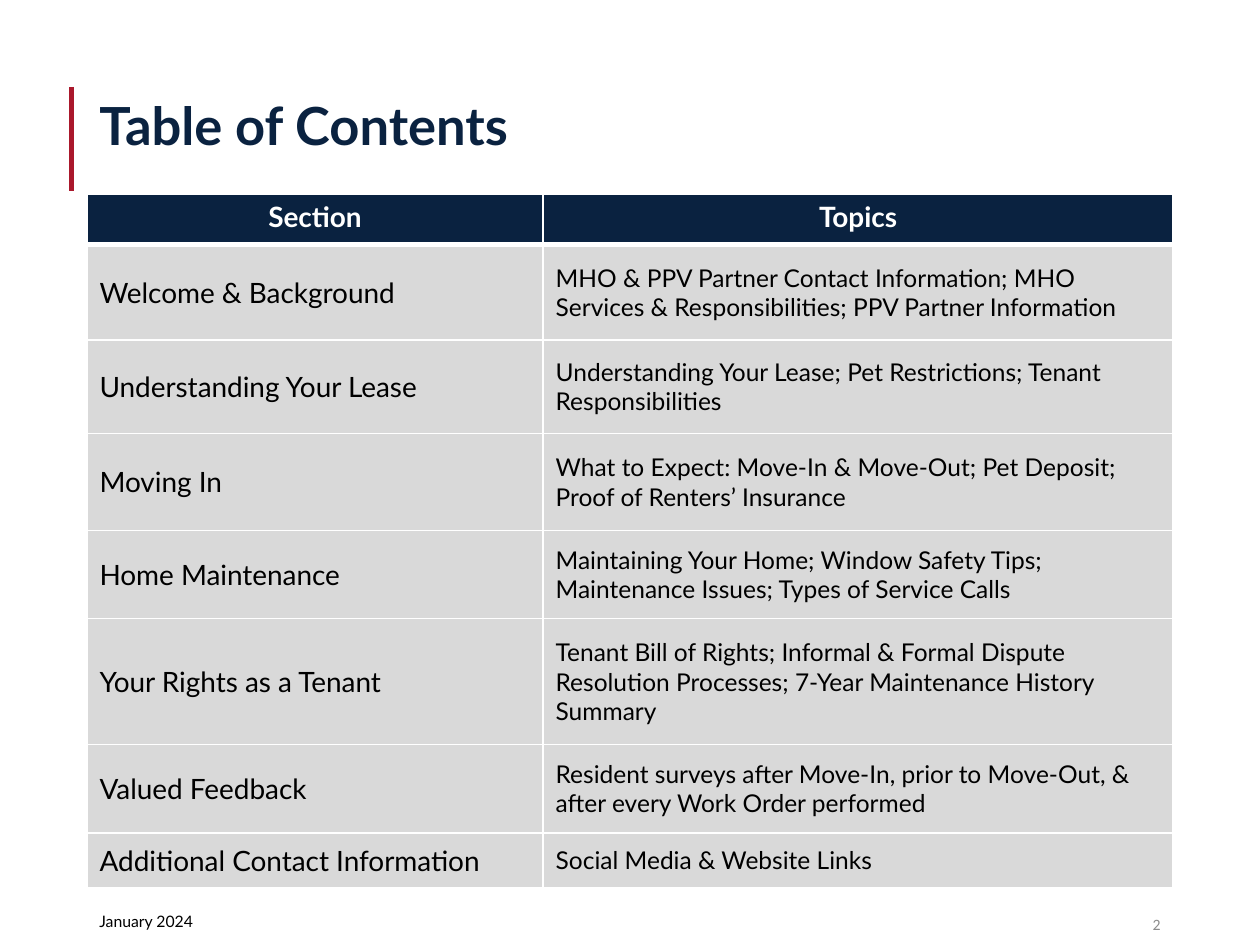
from lxml import etree
from pptx import Presentation
from pptx.dml.color import RGBColor
from pptx.enum.shapes import MSO_CONNECTOR
from pptx.enum.text import MSO_ANCHOR, PP_ALIGN
from pptx.oxml.ns import qn
from pptx.util import Inches, Pt

STRAIGHT = MSO_CONNECTOR.STRAIGHT
TOP, MIDDLE = MSO_ANCHOR.TOP, MSO_ANCHOR.MIDDLE
LEFT, CENTER, RIGHT = PP_ALIGN.LEFT, PP_ALIGN.CENTER, PP_ALIGN.RIGHT
NAVY, RED, GRAY, WHITE, BLACK = "0A2240", "AA182C", "D9D9D9", "FFFFFF", "000000"


def color(value):
    return RGBColor.from_string(value)


def write(frame, text, size, fill=BLACK, bold=False, align=LEFT, font="Lato", spacing=None):
    paragraph = frame.paragraphs[0]
    paragraph.alignment = align
    paragraph.line_spacing = spacing
    run = paragraph.add_run()
    run.text = text
    run.font.name = font
    run.font.size = Pt(size)
    run.font.bold = bold
    run.font.color.rgb = color(fill)


presentation = Presentation()
presentation.slide_width = Inches(10)
presentation.slide_height = Inches(7.5)
slide = presentation.slides.add_slide(presentation.slide_layouts[6])

accent = slide.shapes.add_connector(STRAIGHT, Inches(0.57), Inches(0.69), Inches(0.57), Inches(1.52))
accent.line.color.rgb = color(RED)
accent.line.width = Pt(3)
etree.SubElement(accent.element.spPr, qn("a:effectLst"))

text_boxes = [
    (0.69, 0.75, 8.62, 0.64, TOP, "Table of Contents", dict(size=30, fill=NAVY, bold=True, spacing=0.9)),
    (0.69, 7.21, 2.25, 0.21, MIDDLE, "January 2024", dict(size=9)),
    (7.06, 7.21, 2.25, 0.4, TOP, "2", dict(size=9, fill="8C8C8C", align=RIGHT, font="Calibri")),
]
for left, top, width, height, anchor, text, style in text_boxes:
    shape = slide.shapes.add_textbox(Inches(left), Inches(top), Inches(width), Inches(height))
    shape.text_frame.word_wrap = True
    shape.text_frame.vertical_anchor = anchor
    write(shape.text_frame, text, **style)

contents = [
    (0.4, "Section", "Topics"),
    (0.76, "Welcome & Background",
     "MHO & PPV Partner Contact Information; MHO Services & Responsibilities; PPV Partner Information"),
    (0.74, "Understanding Your Lease", "Understanding Your Lease; Pet Restrictions; Tenant Responsibilities"),
    (0.77, "Moving In", "What to Expect: Move-In & Move-Out; Pet Deposit; Proof of Renters’ Insurance"),
    (0.7, "Home Maintenance",
     "Maintaining Your Home; Window Safety Tips; Maintenance Issues; Types of Service Calls"),
    (1, "Your Rights as a Tenant",
     "Tenant Bill of Rights; Informal & Formal Dispute Resolution Processes; 7-Year Maintenance History Summary"),
    (0.7, "Valued Feedback", "Resident surveys after Move-In, prior to Move-Out, & after every Work Order performed"),
    (0.44, "Additional Contact Information", "Social Media & Website Links"),
]
table = slide.shapes.add_table(
    len(contents), 2, Inches(0.69), Inches(1.54), Inches(8.62), Inches(5.51)
).table
table.columns[0].width = Inches(3.62)
table.columns[1].width = Inches(5)

for row, (height, *texts) in enumerate(contents):
    table.rows[row].height = Inches(height)
    header = row == 0
    for column, text in enumerate(texts):
        cell = table.cell(row, column)
        cell.vertical_anchor = TOP if header else MIDDLE
        if header:
            write(cell.text_frame, text, size=16, fill=WHITE, bold=True, align=CENTER)
        else:
            write(cell.text_frame, text, size=(16, 14)[column])
        properties = cell._tc.get_or_add_tcPr()
        top_width = 3 if row == 1 else 1
        bottom_width = 3 if header else 1
        for side, width in (("L", 1), ("R", 1), ("T", top_width), ("B", bottom_width)):
            border = etree.SubElement(properties, qn(f"a:ln{side}"), w=str(Pt(width)))
            border_fill = etree.SubElement(border, qn("a:solidFill"))
            etree.SubElement(border_fill, qn("a:srgbClr"), val=WHITE)
        cell.fill.solid()
        cell.fill.fore_color.rgb = color(NAVY if header else GRAY)

presentation.save("out.pptx")
